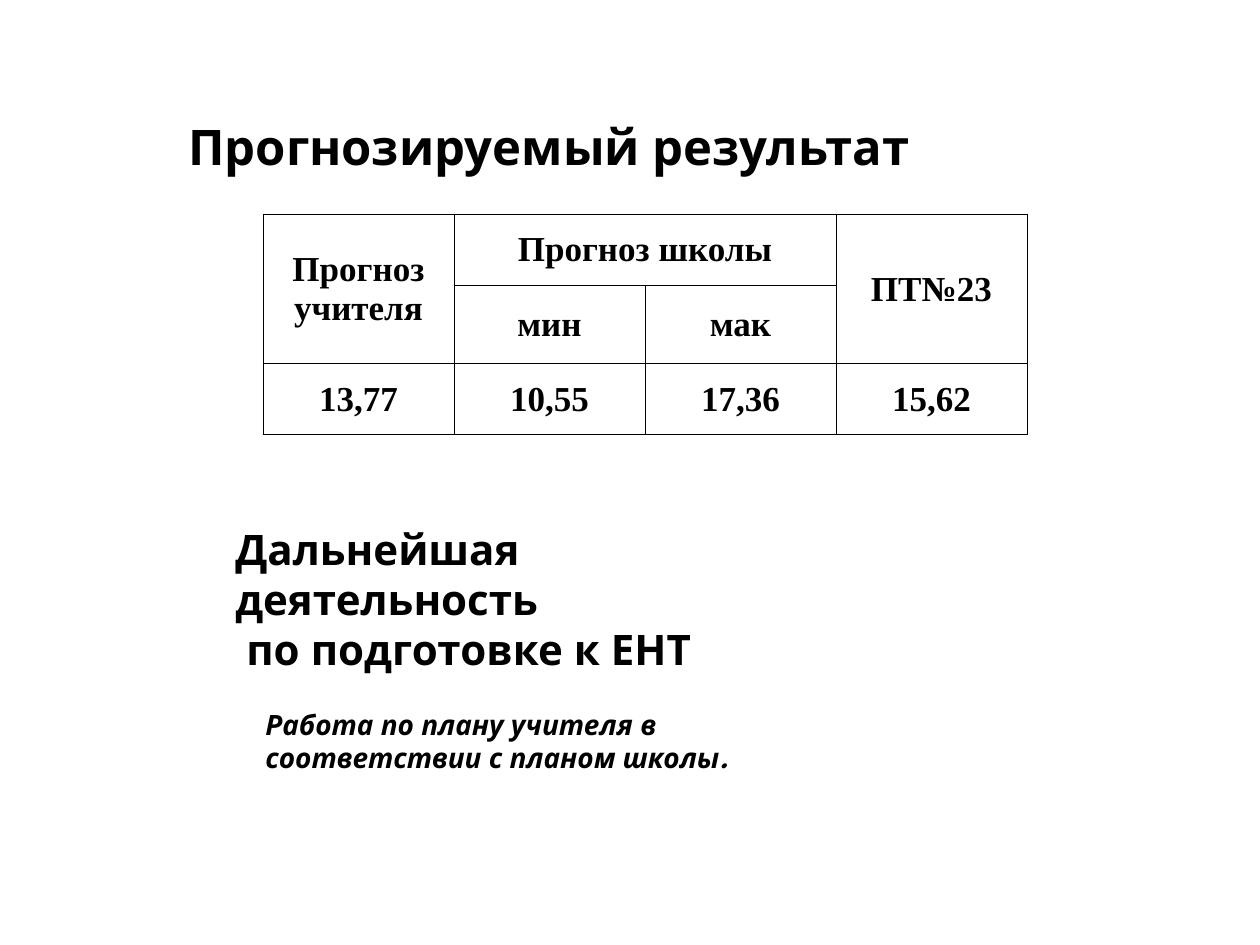
"""Build the slide with the forecast table and the plan for exam preparation."""
from dataclasses import dataclass

from lxml import etree
from pptx import Presentation
from pptx import util as u
from pptx.dml.color import RGBColor
from pptx.enum import text
from pptx.oxml import ns

SCALE = 914400 / 126


@dataclass(frozen=True)
class Theme:
    ink: str = "000000"
    paper: str = "FFFFFF"
    heading_font: str = "League Spartan"
    table_font: str = "Times New Roman"
    title_size: int = 28
    subtitle_size: int = 24
    table_size: int = 20
    note_size: int = 16
    border_width: float = 0.5


def px(length):
    return u.Emu(round(length * SCALE))


def write(frame, content, *, font, size, color, italic=False,
          align=text.PP_ALIGN.LEFT, anchor=text.MSO_ANCHOR.TOP):
    frame.word_wrap = True
    frame.vertical_anchor = anchor
    for index, line in enumerate(content.split("\n")):
        paragraph = frame.paragraphs[0] if index == 0 else frame.add_paragraph()
        paragraph.alignment = align
        run = paragraph.add_run()
        run.text = line
        run.font.name = font
        run.font.size = u.Pt(size)
        run.font.bold = True
        run.font.italic = italic
        run.font.color.rgb = RGBColor.from_string(color)


class SlideBuilder:
    def __init__(self, slide, theme):
        self.slide = slide
        self.theme = theme

    def background(self):
        fill = self.slide.background.fill
        fill.solid()
        fill.fore_color.rgb = RGBColor.from_string(self.theme.paper)

    def label(self, content, left, top, width, height, size, **style):
        shape = self.slide.shapes.add_textbox(px(left), px(top), px(width), px(height))
        write(shape.text_frame, content, font=self.theme.heading_font,
              size=size, color=self.theme.ink, **style)

    def border(self, cell):
        properties = cell._tc.get_or_add_tcPr()
        for side in ("lnL", "lnR", "lnT", "lnB"):
            line = etree.SubElement(properties, ns.qn(f"a:{side}"),
                                    w=str(u.Pt(self.theme.border_width)))
            fill = etree.SubElement(line, ns.qn("a:solidFill"))
            etree.SubElement(fill, ns.qn("a:srgbClr"), val=self.theme.ink)

    def table(self, rows, merges, left, top, column_width, row_height):
        column_count = len(rows[0])
        table = self.slide.shapes.add_table(
            len(rows), column_count, px(left), px(top),
            px(column_width * column_count), px(row_height * len(rows))).table
        table.first_row = table.horz_banding = False
        for column in table.columns:
            column.width = px(column_width)
        for row in table.rows:
            row.height = px(row_height)
        for start, end in merges:
            table.cell(*start).merge(table.cell(*end))
        for row_index, row in enumerate(rows):
            for column_index, content in enumerate(row):
                self.cell(table.cell(row_index, column_index), content)

    def cell(self, cell, content):
        cell.margin_left = cell.margin_right = cell.margin_top = px(1)
        cell.margin_bottom = 0
        cell.vertical_anchor = text.MSO_ANCHOR.MIDDLE
        self.border(cell)
        cell.fill.solid()
        cell.fill.fore_color.rgb = RGBColor.from_string(self.theme.paper)
        if content:
            write(cell.text_frame, content, font=self.theme.table_font,
                  size=self.theme.table_size, color=self.theme.ink,
                  align=text.PP_ALIGN.CENTER)


def main():
    presentation = Presentation()
    presentation.slide_width = px(1260)
    presentation.slide_height = px(945)
    theme = Theme()
    builder = SlideBuilder(
        presentation.slides.add_slide(presentation.slide_layouts[6]), theme)

    builder.background()
    builder.table(
        rows=[["Прогноз учителя", "Прогноз школы", "", "ПТ№23"],
              ["", "мин", "мак", ""],
              ["13,77", "10,55", "17,36", "15,62"]],
        merges=[((0, 0), (1, 0)), ((0, 1), (0, 2)), ((0, 3), (1, 3))],
        left=263, top=214, column_width=191, row_height=71)
    builder.label("Прогнозируемый результат", 176, 95, 977, 101,
                  theme.title_size, anchor=text.MSO_ANCHOR.MIDDLE)
    builder.label("Дальнейшая деятельность\n по подготовке к ЕНТ",
                  223, 517, 605, 115, theme.subtitle_size)
    builder.label("Работа по плану учителя в соответствии с планом школы.",
                  253, 701, 635, 81, theme.note_size, italic=True)
    presentation.save("out.pptx")


if __name__ == "__main__":
    main()
